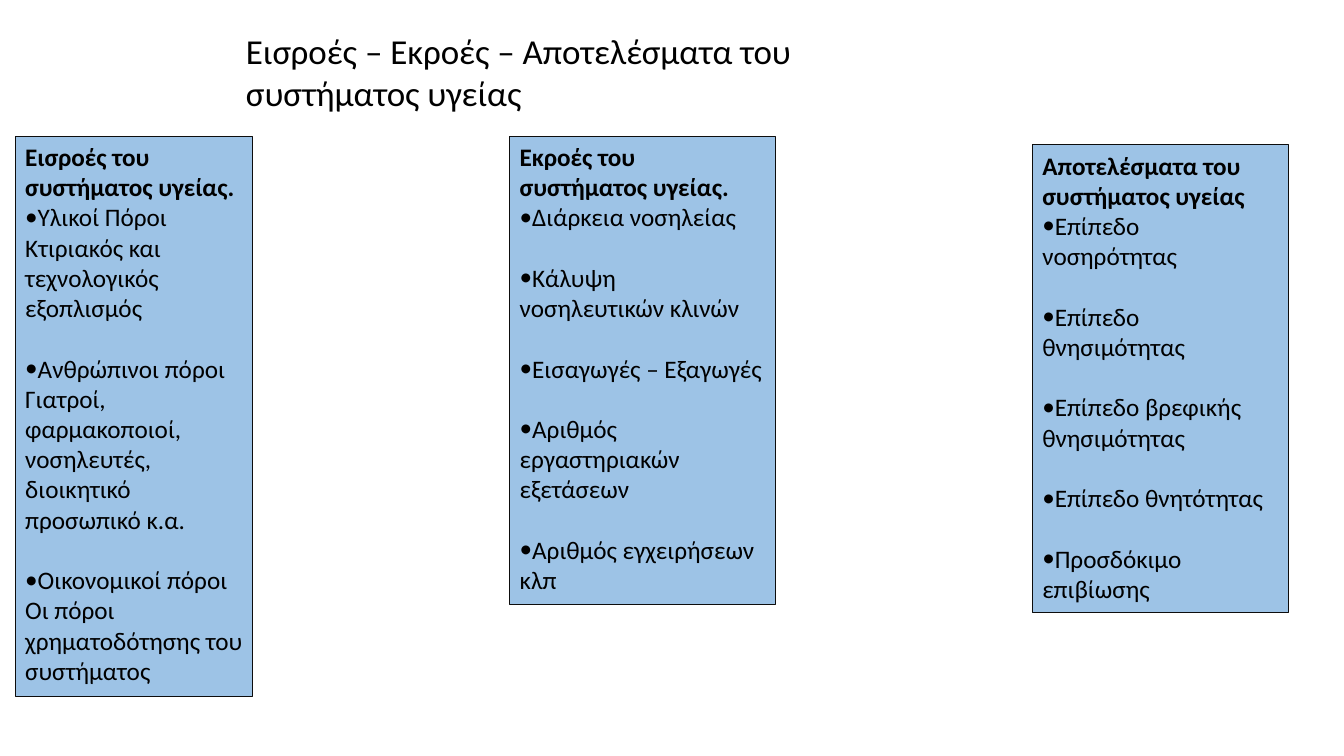
from dataclasses import dataclass

from lxml.etree import SubElement
from pptx import Presentation
from pptx.dml.color import RGBColor
from pptx.enum.text import MSO_ANCHOR, MSO_AUTO_SIZE, PP_ALIGN
from pptx.oxml.ns import qn
from pptx.shapes.placeholder import SlidePlaceholder
from pptx.util import Pt


@dataclass(frozen=True)
class Theme:
    font: str = "Calibri"
    text: RGBColor = RGBColor(0x00, 0x00, 0x00)
    panel: RGBColor = RGBColor(0x9D, 0xC3, 0xE6)
    border: RGBColor = RGBColor(0x0D, 0x0D, 0x0D)
    border_width: float = 0.75
    title_size: float = 25
    body_size: float = 18
    item_gap: float = 21.6


@dataclass(frozen=True)
class Area:
    left: float
    top: float
    width: float
    height: float


@dataclass(frozen=True)
class Item:
    label: str
    detail: str = ""


@dataclass(frozen=True)
class Panel:
    area: Area
    heading: str
    items: tuple[Item, ...]


THEME = Theme()
COMPARISON_LAYOUT = 4
TITLE = "Εισροές – Εκροές – Αποτελέσματα του συστήματος υγείας"
TITLE_AREA = Area(168.5, 17.3, 525.6, 67.7)
PANELS = (
    Panel(Area(10.8, 97.2, 169.6, 400), "Εισροές του συστήματος υγείας.", (
        Item("Υλικοί Πόροι", "Κτιριακός και τεχνολογικός εξοπλισμός"),
        Item("Ανθρώπινοι πόροι",
             "Γιατροί, φαρμακοποιοί, νοσηλευτές, διοικητικό προσωπικό κ.α."),
        Item("Οικονομικοί πόροι", "Οι πόροι χρηματοδότησης του συστήματος"),
    )),
    Panel(Area(364, 97.2, 189.7, 334.4), "Εκροές του συστήματος υγείας.", (
        Item("Διάρκεια νοσηλείας"),
        Item("Κάλυψη νοσηλευτικών κλινών"),
        Item("Εισαγωγές – Εξαγωγές"),
        Item("Αριθμός εργαστηριακών εξετάσεων"),
        Item("Αριθμός εγχειρήσεων κλπ"),
    )),
    Panel(Area(737.3, 103.4, 182.9, 334.4), "Αποτελέσματα του συστήματος υγείας", (
        Item("Επίπεδο νοσηρότητας"),
        Item("Επίπεδο θνησιμότητας"),
        Item("Επίπεδο βρεφικής θνησιμότητας"),
        Item("Επίπεδο θνητότητας"),
        Item("Προσδόκιμο επιβίωσης"),
    )),
)


def set_format(target: object, values: dict[str, object]) -> None:
    for name, value in values.items():
        setattr(target, name, value)


def place(box: SlidePlaceholder, area: Area) -> None:
    """Move the placeholder, fix its size and start its text at the top."""
    set_format(box, {
        "left": Pt(area.left), "top": Pt(area.top),
        "width": Pt(area.width), "height": Pt(area.height),
    })
    set_format(box.text_frame, {
        "word_wrap": True,
        "auto_size": MSO_AUTO_SIZE.NONE,
        "vertical_anchor": MSO_ANCHOR.TOP,
    })


def write_line(box: SlidePlaceholder, text: str, size: float, bold: bool = False,
               bullet: bool = False, gap: float = 0) -> None:
    """Fill the first paragraph if it is still empty, otherwise add one."""
    frame = box.text_frame
    para = frame.add_paragraph() if frame.text else frame.paragraphs[0]
    set_format(para, {
        "alignment": PP_ALIGN.LEFT, "line_spacing": 1.0,
        "space_before": Pt(gap), "space_after": Pt(0),
    })
    span = para.add_run()
    span.text = text
    set_format(span.font, {"name": THEME.font, "size": Pt(size), "bold": bold})
    span.font.color.rgb = THEME.text

    properties = para._p.get_or_add_pPr()
    properties.set("marL", "0")
    properties.set("indent", "0")
    if bullet:
        SubElement(properties, qn("a:buFont"), typeface=THEME.font)
        SubElement(properties, qn("a:buChar"), char="•")
    else:
        SubElement(properties, qn("a:buNone"))


def draw_panel(box: SlidePlaceholder, panel: Panel) -> None:
    place(box, panel.area)
    box.fill.solid()
    box.fill.fore_color.rgb = THEME.panel
    box.line.color.rgb = THEME.border
    box.line.width = Pt(THEME.border_width)
    write_line(box, panel.heading, THEME.body_size, bold=True)
    for number, item in enumerate(panel.items):
        gap = THEME.item_gap if number else 0
        write_line(box, item.label, THEME.body_size, bullet=True, gap=gap)
        if item.detail:
            write_line(box, item.detail, THEME.body_size)


def main() -> None:
    deck = Presentation()
    set_format(deck, {"slide_width": Pt(960), "slide_height": Pt(540)})
    page = deck.slides.add_slide(deck.slide_layouts[COMPARISON_LAYOUT])

    title, *bodies = page.placeholders
    place(title, TITLE_AREA)
    write_line(title, TITLE, THEME.title_size)
    for box, panel in zip(bodies, PANELS):
        draw_panel(box, panel)
    for spare in bodies[len(PANELS):]:
        spare.element.getparent().remove(spare.element)

    deck.save("out.pptx")


if __name__ == "__main__":
    main()
